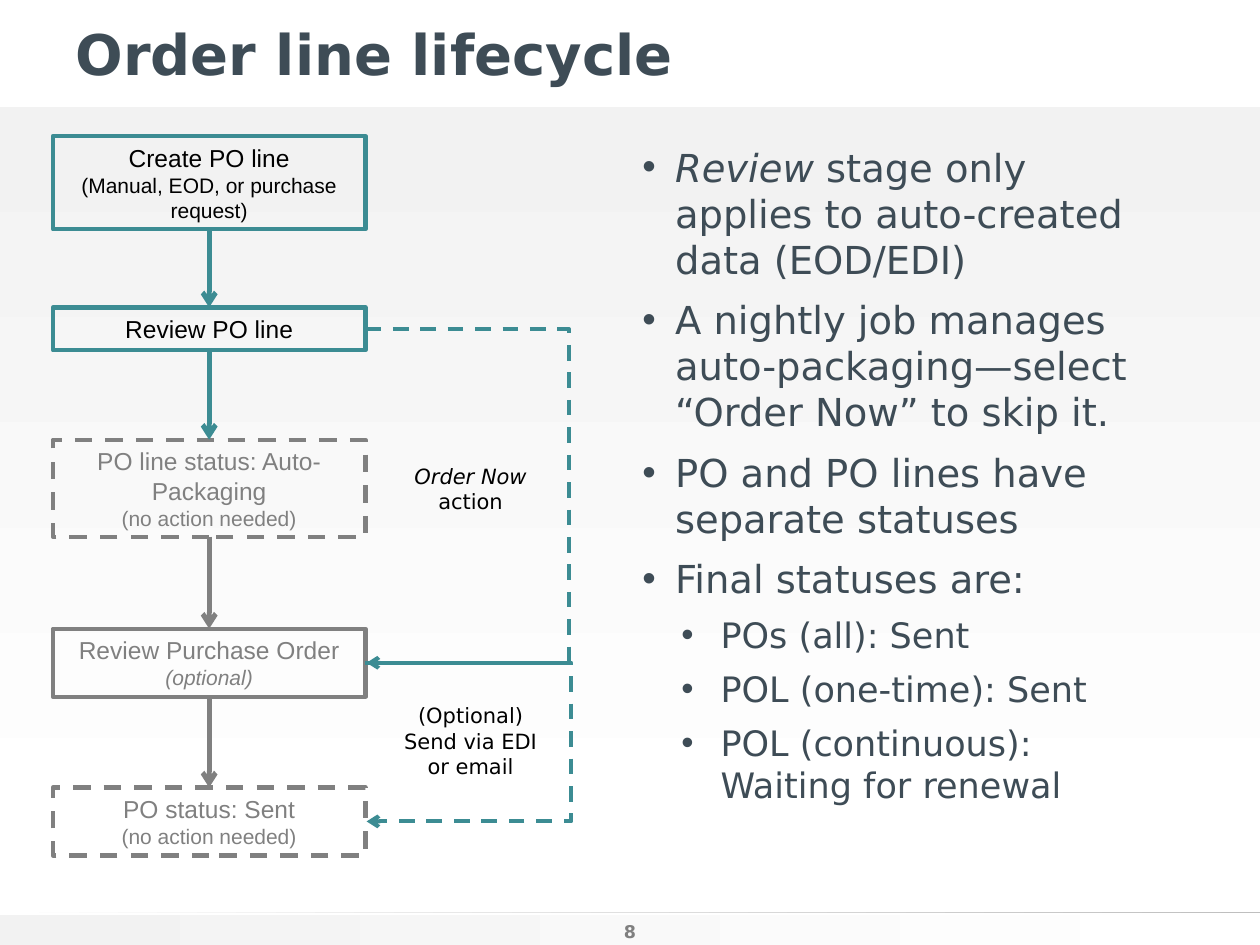
from dataclasses import dataclass

from lxml import etree
from pptx import Presentation
from pptx.dml.color import RGBColor
from pptx.enum import dml, shapes, text
from pptx.oxml import ns
from pptx.util import Inches, Pt


@dataclass(frozen=True)
class Theme:
    ink: str = "3E4C56"
    teal: str = "3C8C93"
    gray: str = "808080"
    black: str = "000000"
    pale: str = "F2F2F2"
    rule: str = "BFBFBF"
    white: str = "FFFFFF"
    heading_font: str = "DejaVu Sans"
    box_font: str = "Arial"
    title: int = 32
    bullet: int = 22
    sub_bullet: int = 20
    step: int = 14
    note: int = 12
    page: int = 10


T = Theme()
CENTER, LEFT = text.PP_ALIGN.CENTER, text.PP_ALIGN.LEFT
TOP, MIDDLE = text.MSO_ANCHOR.TOP, text.MSO_ANCHOR.MIDDLE
BOX_LEFT, BOX_WIDTH = 0.42, 2.48
BOX_RIGHT, BOX_CENTER = BOX_LEFT + BOX_WIDTH, BOX_LEFT + BOX_WIDTH / 2

# Steps: top, height, colour, dashed, name, note, note in italics
STEPS = [
    (1.08, 0.74, T.teal, False, "Create PO line",
     "(Manual, EOD, or purchase request)", False),
    (2.44, 0.34, T.teal, False, "Review PO line", "", False),
    (3.49, 0.77, T.gray, True, "PO line status: Auto-Packaging",
     "(no action needed)", False),
    (4.99, 0.54, T.gray, False, "Review Purchase Order", "(optional)", True),
    (6.25, 0.54, T.gray, True, "PO status: Sent", "(no action needed)", False),
]
BULLETS = [
    "A nightly job manages auto-packaging—select “Order Now” to skip it.",
    "PO and PO lines have separate statuses",
    "Final statuses are:",
]
FINAL_STATUSES = [
    "POs (all): Sent",
    "POL (one-time): Sent",
    "POL (continuous): Waiting for renewal",
]


def rgb(color):
    return RGBColor.from_string(color)


def sub(parent, tag, **attributes):
    return etree.SubElement(parent, ns.qn(tag), attributes)


def write(paragraph, content, *, size, color, font=T.heading_font,
          bold=False, italic=False, align=LEFT):
    """Add one formatted run to a paragraph."""
    paragraph.alignment = align
    run = paragraph.add_run()
    run.text = content
    run.font.size, run.font.name = Pt(size), font
    run.font.bold, run.font.italic = bold, italic
    run.font.color.rgb = rgb(color)


def set_frame(frame, anchor):
    frame.word_wrap = True
    frame.vertical_anchor = anchor
    return frame


def add_text_box(slide, left, top, width, height, anchor=TOP):
    box = slide.shapes.add_textbox(*map(Inches, (left, top, width, height)))
    return set_frame(box.text_frame, anchor)


def add_rectangle(slide, left, top, width, height):
    rectangle = slide.shapes.add_shape(
        shapes.MSO_SHAPE.RECTANGLE, *map(Inches, (left, top, width, height)))
    rectangle.shadow.inherit = False
    return rectangle


def add_band(slide, top, height, start, angle):
    band = add_rectangle(slide, 0, top, 10, height)
    band.line.fill.background()
    band.fill.gradient()
    band.fill.gradient_angle = angle
    for stop, color in zip(band.fill.gradient_stops, (start, T.white)):
        stop.color.rgb = rgb(color)


def style_line(line, color, width, dashed):
    line.color.rgb = rgb(color)
    line.width = Pt(width)
    if dashed:
        line.dash_style = dml.MSO_LINE.DASH


def add_step(slide, top, height, color, dashed, name, note, note_italic):
    box = add_rectangle(slide, BOX_LEFT, top, BOX_WIDTH, height)
    box.fill.background()
    style_line(box.line, color, 2.5, dashed)
    paragraph = set_frame(box.text_frame, MIDDLE).paragraphs[0]
    look = dict(color=T.black if color == T.teal else color,
                font=T.box_font, align=CENTER)
    write(paragraph, name, size=T.step, **look)
    if note:
        paragraph.add_line_break()
        sub(paragraph._p[-1], "a:rPr", sz=str(T.step * 100))
        write(paragraph, note, size=T.note, italic=note_italic, **look)


def add_arrow(slide, start, end, color, width, kind=shapes.MSO_CONNECTOR.STRAIGHT,
              dashed=False):
    arrow = slide.shapes.add_connector(kind, *map(Inches, start + end))
    style_line(arrow.line, color, width, dashed)
    sub(arrow.line._get_or_add_ln(), "a:tailEnd", type="arrow")
    sub(arrow._element.spPr, "a:effectLst")
    return arrow


def add_bypass(slide, start_y, end_y, turn_x):
    """Dashed arrow that leaves and re-enters the right edge of the steps."""
    run = 0.01
    arrow = add_arrow(slide, (BOX_RIGHT, start_y), (BOX_RIGHT + run, end_y),
                      T.teal, 2.25, shapes.MSO_CONNECTOR.ELBOW, True)
    guides = arrow._element.spPr.prstGeom.get_or_add_avLst()
    bend = round((turn_x - BOX_RIGHT) / run * 100000)
    sub(guides, "a:gd", name="adj1", fmla=f"val {bend}")


def add_bullet(frame, runs, level=0):
    first = not frame.paragraphs[0].runs
    paragraph = frame.paragraphs[0] if first else frame.add_paragraph()
    paragraph.level = level
    margin, hanging, size, gap = ((0.26, 0.26, T.bullet, 8),
                                  (0.62, 0.31, T.sub_bullet, 7))[level]
    if not first:
        paragraph.space_before = Pt(gap)
    properties = paragraph._p.get_or_add_pPr()
    properties.set("marL", str(Inches(margin)))
    properties.set("indent", str(-Inches(hanging)))
    sub(properties, "a:buFont", typeface="Arial")
    sub(properties, "a:buChar", char="•")
    for content, italic in runs:
        write(paragraph, content, size=size, color=T.ink, italic=italic)


def add_label(slide, top, height, runs):
    paragraph = add_text_box(slide, 3.03, top, 1.41, height).paragraphs[0]
    for content, italic in runs:
        write(paragraph, content, size=T.note, color=T.black, italic=italic,
              align=CENTER)


def main():
    prs = Presentation()
    prs.slide_width, prs.slide_height = Inches(10), Inches(7.5)
    slide = prs.slides.add_slide(prs.slide_layouts[5])

    # Background bands and page number
    add_band(slide, 7.26, 0.24, T.pale, 0)
    add_band(slide, 0.85, 5.84, T.pale, 270)
    add_band(slide, 7.24, 0.01, T.rule, 180)
    page = add_text_box(slide, 4.68, 7.03, 0.64, 0.5, text.MSO_ANCHOR.BOTTOM)
    write(page.paragraphs[0], "8", size=T.page, color=T.gray, bold=True,
          align=CENTER)

    # Title
    title = slide.shapes.title
    title.left, title.top = Inches(0.5), Inches(0.13)
    title.width, title.height = Inches(9), Inches(0.58)
    write(set_frame(title.text_frame, MIDDLE).paragraphs[0],
          "Order line lifecycle", size=T.title, color=T.ink, bold=True)

    # Key points
    points = add_text_box(slide, 5, 1.09, 4.12, 5.86)
    add_bullet(points, [("Review", True), (
        " stage only applies to auto-created data (EOD/EDI)", False)])
    for level, lines in enumerate((BULLETS, FINAL_STATUSES)):
        for line in lines:
            add_bullet(points, [(line, False)], level)

    # Flow of steps
    for step in STEPS:
        add_step(slide, *step)
    for (top, height, color, *_), following in zip(STEPS, STEPS[1:]):
        add_arrow(slide, (BOX_CENTER, top + height),
                  (BOX_CENTER, following[0]), color, 2.75)

    # Bypass routes and their labels
    review_line, review_order, sent = (
        STEPS[i][0] + STEPS[i][1] / 2 for i in (1, 3, 4))
    add_bypass(slide, review_line, review_order, 4.54)
    add_label(slide, 3.63, 0.5, [("Order Now", True), (" action", False)])
    add_bypass(slide, review_order, sent, 4.56)
    add_label(slide, 5.53, 0.71, [("(Optional) Send via EDI or email", False)])

    prs.save("out.pptx")


if __name__ == "__main__":
    main()
